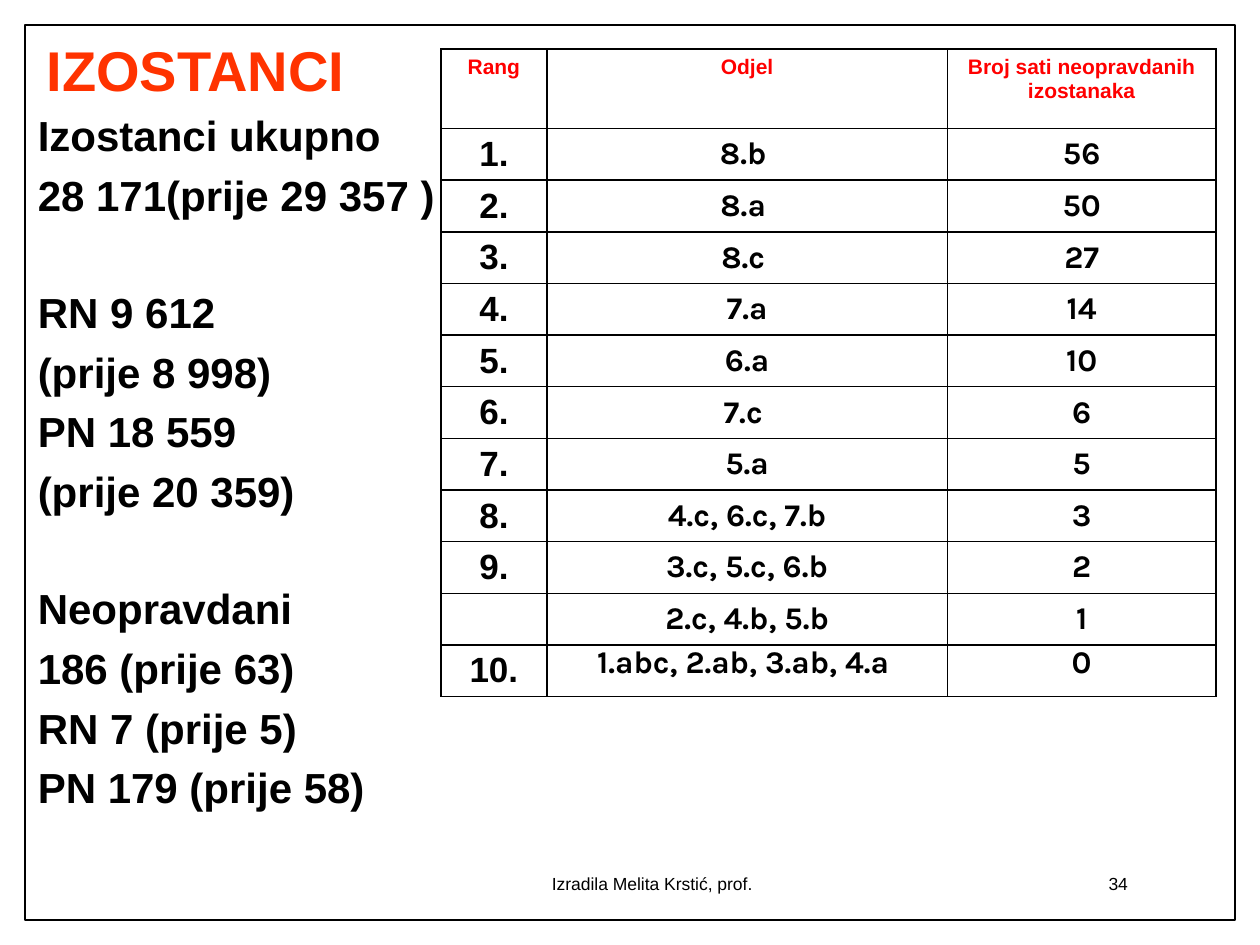
from dataclasses import dataclass

from lxml.etree import SubElement
from pptx import Presentation
from pptx.dml.color import RGBColor
from pptx.enum.shapes import MSO_SHAPE
from pptx.enum.text import MSO_ANCHOR, MSO_AUTO_SIZE, PP_ALIGN
from pptx.oxml.ns import qn
from pptx.util import Inches, Pt


@dataclass(frozen=True)
class Theme:
    black: RGBColor = RGBColor(0x00, 0x00, 0x00)
    white: RGBColor = RGBColor(0xFF, 0xFF, 0xFF)
    title: RGBColor = RGBColor(0xFF, 0x33, 0x00)
    header: RGBColor = RGBColor(0xFF, 0x00, 0x00)
    font: str = "Arial"
    table_font: str = "Karla"
    title_size: int = 32
    body_size: int = 24
    rank_size: int = 20
    cell_size: int = 18
    header_size: int = 12
    footer_size: int = 10


T = Theme()

# Each group of totals is set apart by one line of space
GROUPS = [
    ["Izostanci ukupno", "28 171(prije 29 357 )"],
    ["RN 9 612", "(prije 8 998)", "PN 18 559", "(prije 20 359)"],
    ["Neopravdani", "186 (prije 63)", "RN 7 (prije 5)", "PN 179 (prije 58)"],
]
HEADERS = ["Rang", "Odjel", "Broj sati neopravdanih izostanaka"]
RANKING = [
    ("1.", "8.b ", "56"),
    ("2.", "8.a ", "50"),
    ("3.", "8.c ", "27"),
    ("4.", "7.a", "14"),
    ("5.", "6.a", "10"),
    ("6.", "7.c ", "6"),
    ("7.", "5.a", "5"),
    ("8.", "4.c, 6.c, 7.b", "3"),
    ("9.", "3.c, 5.c, 6.b", "2"),
    ("", "2.c, 4.b, 5.b", "1"),
    ("10.", "1.abc, 2.ab, 3.ab, 4.a ", "0"),
]
COL_WIDTHS = [0.84, 3.18, 2.13]
HEADER_HEIGHT, ROW_HEIGHT = 0.63, 0.41


def add_text(p, text, size=T.body_size, color=T.black, font=T.font, bold=True,
             align=PP_ALIGN.LEFT, line=1.0, before=0):
    p.alignment, p.line_spacing, p.space_before = align, line, Pt(before)
    r = p.add_run()
    r.text = text
    r.font.name, r.font.size, r.font.bold = font, Pt(size), bold
    r.font.color.rgb = color


def place(sp, box):
    sp.left, sp.top, sp.width, sp.height = (Inches(v) for v in box)


def add_frame(s, box):
    sp = s.shapes.add_shape(MSO_SHAPE.RECTANGLE, *(Inches(v) for v in box))
    sp.shadow.inherit = False
    sp.fill.solid()
    sp.fill.fore_color.rgb = T.white
    sp.line.color.rgb = T.black
    sp.line.width = Pt(1)
    s.shapes._spTree.insert(2, sp._element)  # behind the placeholders


def add_title(s, box):
    sp = s.shapes.title
    place(sp, box)
    tf = sp.text_frame
    tf.auto_size = MSO_AUTO_SIZE.NONE
    tf.vertical_anchor = MSO_ANCHOR.MIDDLE
    add_text(tf.paragraphs[0], "IZOSTANCI", size=T.title_size, color=T.title, line=0.9)


def add_totals(s, box):
    sp = s.placeholders[1]
    place(sp, box)
    tf = sp.text_frame
    tf.auto_size = MSO_AUTO_SIZE.NONE
    p = tf.paragraphs[0]
    for g, group in enumerate(GROUPS):
        for i, text in enumerate(group):
            if g or i:
                p = tf.add_paragraph()
            add_text(p, text, line=0.8, before=44 if g and i == 0 else 11)
            pPr = p._p.get_or_add_pPr()
            pPr.set("marL", "0")
            pPr.set("indent", "0")
            SubElement(pPr, qn("a:buNone"))


def format_cell(cell, margin_x, margin_y, anchor):
    cell.margin_left = cell.margin_right = Inches(margin_x)
    cell.margin_top = cell.margin_bottom = Inches(margin_y)
    cell.vertical_anchor = anchor
    # Borders come before the fill in the cell properties
    tcPr = cell._tc.get_or_add_tcPr()
    for side in ("a:lnL", "a:lnR", "a:lnT", "a:lnB"):
        ln = SubElement(tcPr, qn(side), w=str(Pt(1)))
        fill = SubElement(ln, qn("a:solidFill"))
        SubElement(fill, qn("a:srgbClr"), val=str(T.black))
    cell.fill.solid()
    cell.fill.fore_color.rgb = T.white


def add_ranking(s, left, top):
    height = HEADER_HEIGHT + ROW_HEIGHT * len(RANKING)
    table = s.shapes.add_table(len(RANKING) + 1, len(HEADERS), Inches(left), Inches(top),
                               Inches(sum(COL_WIDTHS)), Inches(height)).table
    table.first_row = table.horz_banding = False
    for col, width in zip(table.columns, COL_WIDTHS):
        col.width = Inches(width)
    for i, row in enumerate(table.rows):
        row.height = Inches(ROW_HEIGHT if i else HEADER_HEIGHT)

    # Header row
    for c, text in enumerate(HEADERS):
        cell = table.cell(0, c)
        format_cell(cell, 0.1, 0.05, MSO_ANCHOR.TOP)
        add_text(cell.text_frame.paragraphs[0], text, size=T.header_size,
                 color=T.header, align=PP_ALIGN.CENTER)

    # Ranked classes; the last row's values sit at the top
    for i, values in enumerate(RANKING, start=1):
        for c, text in enumerate(values):
            cell = table.cell(i, c)
            is_rank = c == 0
            at_top = i == len(RANKING) and not is_rank
            format_cell(cell, 0.1 if is_rank else 0.07, 0.04 if is_rank else 0,
                        MSO_ANCHOR.TOP if at_top else MSO_ANCHOR.MIDDLE)
            if text:
                add_text(cell.text_frame.paragraphs[0], text, align=PP_ALIGN.CENTER,
                         size=T.rank_size if is_rank else T.cell_size,
                         font=T.font if is_rank else T.table_font)


def add_footer(s, box, text, align):
    tf = s.shapes.add_textbox(*(Inches(v) for v in box)).text_frame
    tf.word_wrap = True
    tf.vertical_anchor = MSO_ANCHOR.MIDDLE
    add_text(tf.paragraphs[0], text, size=T.footer_size, bold=False, align=align)


def main():
    prs = Presentation()
    prs.slide_width, prs.slide_height = Inches(10), Inches(7.5)
    s = prs.slides.add_slide(prs.slide_layouts[1])
    add_frame(s, (0.2, 0.2, 9.6, 7.1))
    add_title(s, (0.27, 0.28, 3.47, 0.61))
    add_totals(s, (0.2, 0.9, 3.54, 5.76))
    add_ranking(s, 3.5, 0.39)
    add_footer(s, (3.24, 6.81, 3.87, 0.4), "Izradila Melita Krstić, prof.", PP_ALIGN.CENTER)
    add_footer(s, (7.65, 6.81, 1.4, 0.4), "34", PP_ALIGN.RIGHT)
    prs.save("out.pptx")


if __name__ == "__main__":
    main()
